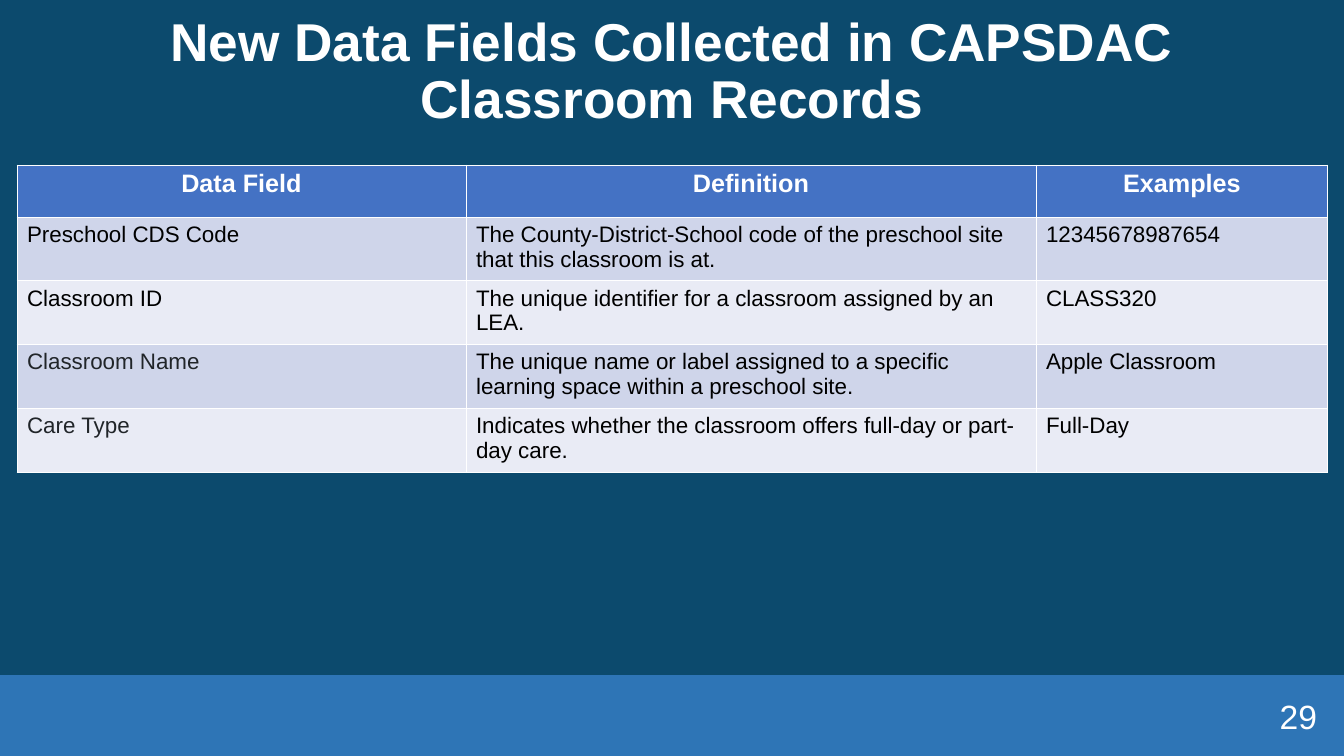
import dataclasses

import lxml.etree
import pptx
import pptx.dml.color
import pptx.enum.shapes
import pptx.enum.text
import pptx.oxml.ns
import pptx.util

ALIGN = pptx.enum.text.PP_ALIGN
MIDDLE = pptx.enum.text.MSO_ANCHOR.MIDDLE


@dataclasses.dataclass(frozen=True)
class Theme:
    font: str = "Arial"
    background: str = "0C4A6D"
    footer: str = "2E75B6"
    header: str = "4472C4"
    bands: tuple = ("CFD5EA", "E9EBF5")
    white: str = "FFFFFF"
    black: str = "000000"
    charcoal: str = "212529"
    title_size: int = 38
    number_size: int = 24
    header_size: int = 18
    body_size: int = 16
    border_width: float = 0.75


def px(n):
    return pptx.util.Emu(round(n * 914400 / 100.8))


def rgb(color):
    return pptx.dml.color.RGBColor.from_string(color)


class SlideBuilder:
    def __init__(self, slide, theme):
        self.s = slide
        self.theme = theme

    def background(self, color):
        fill = self.s.background.fill
        fill.solid()
        fill.fore_color.rgb = rgb(color)

    def rect(self, x, y, w, h, color):
        sp = self.s.shapes.add_shape(
            pptx.enum.shapes.MSO_SHAPE.RECTANGLE, px(x), px(y), px(w), px(h))
        sp.shadow.inherit = False
        sp.fill.solid()
        sp.fill.fore_color.rgb = rgb(color)
        sp.line.fill.background()

    def run(self, p, text, size, color, bold=False):
        r = p.add_run()
        r.text = text
        r.font.name = self.theme.font
        r.font.size = pptx.util.Pt(size)
        r.font.bold = bold
        r.font.color.rgb = rgb(color)

    def text(self, x, y, w, h, lines, size, align, bold=False, spacing=1.0):
        sp = self.s.shapes.add_textbox(px(x), px(y), px(w), px(h))
        tf = sp.text_frame
        tf.word_wrap = True
        tf.vertical_anchor = MIDDLE
        p = tf.paragraphs[0]
        p.alignment = align
        p.line_spacing = spacing
        for i, line in enumerate(lines):
            if i:
                p.add_line_break()
            self.run(p, line, size, self.theme.white, bold)

    def borders(self, cell):
        tc_pr = cell._tc.get_or_add_tcPr()
        qn = pptx.oxml.ns.qn
        width = str(pptx.util.Pt(self.theme.border_width))
        for side in ("lnL", "lnR", "lnT", "lnB"):
            ln = lxml.etree.SubElement(tc_pr, qn("a:" + side), w=width)
            fill = lxml.etree.SubElement(ln, qn("a:solidFill"))
            lxml.etree.SubElement(fill, qn("a:srgbClr"), val=self.theme.white)

    def cell(self, cell, text, fill, size, color, align, bold):
        self.borders(cell)
        cell.fill.solid()
        cell.fill.fore_color.rgb = rgb(fill)
        p = cell.text_frame.paragraphs[0]
        p.alignment = align
        self.run(p, text, size, color, bold)

    def table(self, x, y, widths, header_height, row_height, header, rows):
        t = self.theme
        heights = [header_height] + [row_height] * len(rows)
        table = self.s.shapes.add_table(
            len(heights), len(widths), px(x), px(y),
            px(sum(widths)), px(sum(heights))).table
        for column, width in zip(table.columns, widths):
            column.width = px(width)
        for row, height in zip(table.rows, heights):
            row.height = px(height)
        for c, text in enumerate(header):
            self.cell(table.cell(0, c), text, t.header, t.header_size,
                      t.white, ALIGN.CENTER, True)
        for r, (name_color, *texts) in enumerate(rows):
            for c, text in enumerate(texts):
                color = t.black if c else name_color
                self.cell(table.cell(r + 1, c), text, t.bands[r % 2],
                          t.body_size, color, ALIGN.LEFT, False)


def main():
    theme = Theme()
    prs = pptx.Presentation()
    prs.slide_width, prs.slide_height = px(1344), px(756)
    b = SlideBuilder(prs.slides.add_slide(prs.slide_layouts[6]), theme)
    b.background(theme.background)
    b.rect(0, 675, 1344, 81, theme.footer)
    b.text(17, 0, 1310, 146,
           ["New Data Fields Collected in CAPSDAC", "Classroom Records"],
           theme.title_size, ALIGN.CENTER, bold=True, spacing=0.9)
    fields = [
        (theme.black, "Preschool CDS Code",
         "The County-District-School code of the preschool site that this classroom is at.",
         "12345678987654"),
        (theme.black, "Classroom ID",
         "The unique identifier for a classroom assigned by an LEA.",
         "CLASS320"),
        (theme.charcoal, "Classroom Name",
         "The unique name or label assigned to a specific learning space within a preschool site.",
         "Apple Classroom"),
        (theme.charcoal, "Care Type",
         "Indicates whether the classroom offers full-day or part-day care.",
         "Full-Day"),
    ]
    b.table(17, 165, [449, 570, 292], 52, 60,
            ["Data Field", "Definition", "Examples"], fields)
    b.text(1025, 696, 302, 40, ["29"], theme.number_size, ALIGN.RIGHT)
    prs.save("out.pptx")


if __name__ == "__main__":
    main()
